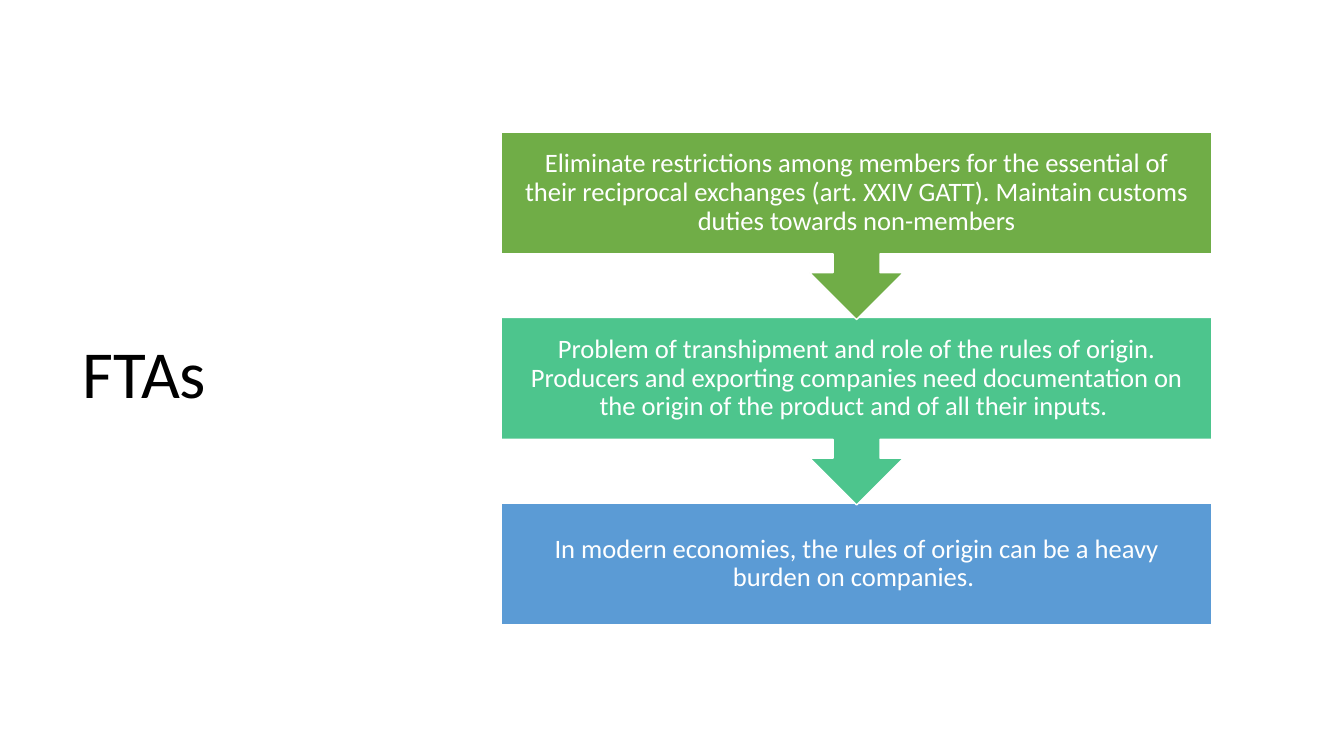
from pptx import Presentation
from pptx import dml, util as u
from pptx.dml import color
from pptx.enum import shapes, text

STEPS = [
    ("Eliminate restrictions among members for the essential of their reciprocal "
     "exchanges (art. XXIV GATT). Maintain customs duties towards non-members", "70AD47"),
    ("Problem of transhipment and role of the rules of origin. Producers and exporting "
     "companies need documentation on the origin of the product and of all their inputs. ", "4DC58D"),
    ("In modern economies, the rules of origin can be a heavy burden on companies. ", "5B9BD5"),
]


def rgb(value):
    """Turn a hex string into a colour."""
    return color.RGBColor.from_string(value)


def apply(target, formats):
    """Set every attribute named in a dict of format values."""
    for name, value in formats.items():
        setattr(target, name, value)


def write(shape, words, size, ink, align, margins):
    """Fill a shape with one formatted, vertically centred paragraph."""
    frame = shape.text_frame
    frame.text = words
    apply(frame, {"word_wrap": True, "auto_size": text.MSO_AUTO_SIZE.NONE,
                  "vertical_anchor": text.MSO_ANCHOR.MIDDLE})
    apply(frame, {f"margin_{side}": u.Inches(inset)
                  for side, inset in zip(("left", "top", "right", "bottom"), margins)})
    para = frame.paragraphs[0]
    apply(para, {"alignment": align, "line_spacing": 0.9})
    span = para.runs[0]
    apply(span.font, {"name": "Calibri", "size": u.Pt(size)})
    span.font.color.rgb = rgb(ink)


def place_title(page, words, left, top, width, height):
    """Move the title placeholder into its box and write it."""
    title = page.shapes.title
    apply(title, {"left": u.Inches(left), "top": u.Inches(top),
                  "width": u.Inches(width), "height": u.Inches(height)})
    write(title, words, 48, "000000", text.PP_ALIGN.LEFT, (0.1, 0.05, 0.1, 0.05))


def place_process(page, steps, left, top, width, height):
    """Stack the steps from the bottom up, each pointing to the next."""
    body = 1.21
    pitch = (height - body) / (len(steps) - 1)
    callout = pitch + 0.02
    group = page.shapes.add_group_shape()
    for index, (words, fill) in reversed(list(enumerate(steps))):
        last = index == len(steps) - 1
        kind = shapes.MSO_SHAPE.RECTANGLE if last else shapes.MSO_SHAPE.UP_ARROW_CALLOUT
        place = u.Inches(left), u.Inches(top + index * pitch), u.Inches(width)
        panel = group.shapes.add_shape(kind, *place, u.Inches(body if last else callout))
        panel.rotation = 0 if last else 180
        panel.shadow.inherit = False
        panel.fill.solid()
        panel.fill.fore_color.rgb = rgb(fill)
        panel.line.color.rgb = rgb("FFFFFF")
        panel.line.width = u.Pt(1)
        label = group.shapes.add_textbox(*place, u.Inches(body))
        write(label, words, 19, "FFFFFF", text.PP_ALIGN.CENTER, (0.15,) * 4)


def main():
    """Build and save the deck."""
    deck = Presentation()
    apply(deck, {"slide_width": u.Inches(13.33), "slide_height": u.Inches(7.5)})
    page = deck.slides.add_slide(deck.slide_layouts.get_by_name("Title Only"))
    place_title(page, "FTAs", 0.72, 0.67, 3.68, 6.13)
    place_process(page, STEPS, 4.97, 1.31, 7.05, 4.89)
    deck.save("out.pptx")


if __name__ == "__main__":
    main()
